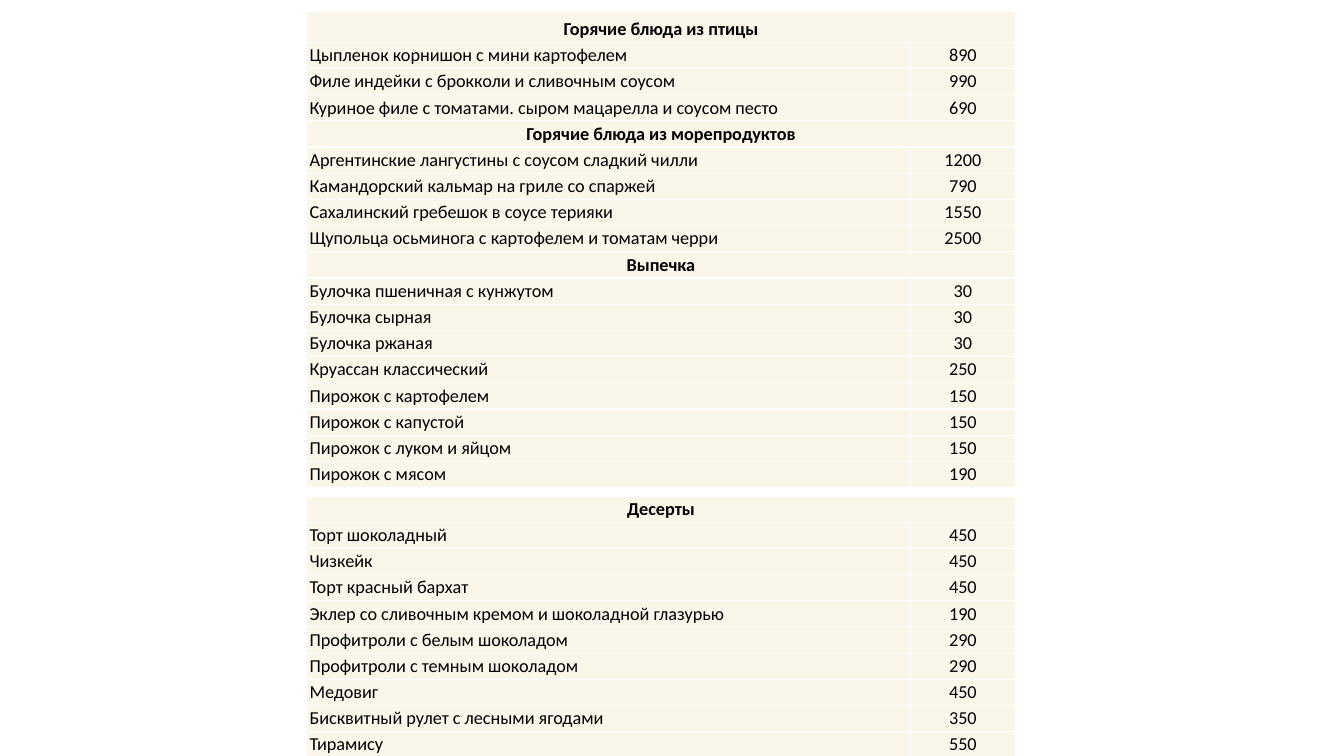
from dataclasses import dataclass

from lxml import etree
from pptx import Presentation
from pptx import util as u
from pptx.dml import color
from pptx.enum import text
from pptx.oxml import ns

COLOURS = {"cell": "FAF6EA", "border": "FFFFFF", "text": "000000"}
FONT, FONT_SIZE = "Calibri", 13
LEFT, COLUMN_WIDTHS, ROW_HEIGHT = 3.04, (5.99, 1.04), 0.22
SIDE_INSET, EDGE_INSET = 0.03, 0.02


@dataclass
class Section:
    heading: str
    dishes: list[tuple[str, int]]


@dataclass
class Menu:
    top: float
    height: float
    first_row: float
    sections: list[Section]


MENUS = [
    Menu(0.11, 4.7, 0.31, [
        Section("Горячие блюда из птицы", [
            ("Цыпленок корнишон с мини картофелем", 890),
            ("Филе индейки с брокколи и сливочным соусом", 990),
            ("Куриное филе с томатами. сыром мацарелла и соусом песто", 690),
        ]),
        Section("Горячие блюда из морепродуктов", [
            ("Аргентинские лангустины с соусом сладкий чилли", 1200),
            ("Камандорский кальмар на гриле со спаржей", 790),
            ("Сахалинский гребешок в соусе терияки", 1550),
            ("Щупольца осьминога с картофелем и томатам черри", 2500),
        ]),
        Section("Выпечка", [
            ("Булочка пшеничная с кунжутом", 30),
            ("Булочка сырная", 30),
            ("Булочка ржаная", 30),
            ("Круассан классический", 250),
            ("Пирожок с картофелем", 150),
            ("Пирожок с капустой", 150),
            ("Пирожок с луком и яйцом", 150),
            ("Пирожок с мясом", 190),
        ]),
    ]),
    Menu(4.92, 2.58, ROW_HEIGHT, [
        Section("Десерты", [
            ("Торт шоколадный", 450),
            ("Чизкейк", 450),
            ("Торт красный бархат", 450),
            ("Эклер со сливочным кремом и шоколадной глазурью", 190),
            ("Профитроли с белым шоколадом", 290),
            ("Профитроли с темным шоколадом", 290),
            ("Медовиг", 450),
            ("Бисквитный рулет с лесными ягодами", 350),
            ("Тирамису", 550),
        ]),
    ]),
]


def add_borders(cell) -> None:
    """Draw a thin line on each side of a cell."""
    properties = cell._tc.get_or_add_tcPr()
    for side in ("a:lnL", "a:lnR", "a:lnT", "a:lnB"):
        line = etree.SubElement(properties, ns.qn(side), w=str(u.Pt(1)))
        fill = etree.SubElement(line, ns.qn("a:solidFill"))
        etree.SubElement(fill, ns.qn("a:srgbClr"), val=COLOURS["border"])


def style_cell(cell) -> None:
    """Set the borders, fill, insets and anchor of a cell."""
    add_borders(cell)
    cell.fill.solid()
    cell.fill.fore_color.rgb = color.RGBColor.from_string(COLOURS["cell"])
    cell.margin_left = cell.margin_right = u.Inches(SIDE_INSET)
    cell.margin_top = cell.margin_bottom = u.Inches(EDGE_INSET)
    cell.vertical_anchor = text.MSO_ANCHOR.BOTTOM


def write_cell(cell, words: str, centred: bool = False, bold: bool = False) -> None:
    """Put one formatted paragraph in a cell."""
    para = cell.text_frame.paragraphs[0]
    para.text = words
    para.alignment = text.PP_ALIGN.CENTER if centred else text.PP_ALIGN.LEFT
    font = para.runs[0].font
    font.name, font.size, font.bold = FONT, u.Pt(FONT_SIZE), bold
    font.color.rgb = color.RGBColor.from_string(COLOURS["text"])


def draw_menu(page, menu: Menu) -> None:
    """Draw one table of headings, dishes and prices."""
    rows = []
    for section in menu.sections:
        rows += [(section.heading, None), *section.dishes]

    frame = page.shapes.add_table(
        len(rows), len(COLUMN_WIDTHS), u.Inches(LEFT), u.Inches(menu.top),
        u.Inches(sum(COLUMN_WIDTHS)), u.Inches(menu.height))
    table = frame.table
    for column, width in zip(table.columns, COLUMN_WIDTHS):
        column.width = u.Inches(width)
    for row in table.rows:
        row.height = u.Inches(ROW_HEIGHT)
    table.rows[0].height = u.Inches(menu.first_row)
    frame.height = u.Inches(menu.height)

    for index, (name, price) in enumerate(rows):
        name_cell, price_cell = table.cell(index, 0), table.cell(index, 1)
        style_cell(name_cell)
        style_cell(price_cell)
        if price is None:
            name_cell.merge(price_cell)
            write_cell(name_cell, name, centred=True, bold=True)
        else:
            write_cell(name_cell, name)
            write_cell(price_cell, str(price), centred=True)


def main() -> None:
    # Blank widescreen page
    deck = Presentation()
    deck.slide_width, deck.slide_height = u.Inches(13.33), u.Inches(7.5)
    page = deck.slides.add_slide(deck.slide_layouts[6])

    # Menu tables
    for menu in MENUS:
        draw_menu(page, menu)

    deck.save("out.pptx")


if __name__ == "__main__":
    main()
